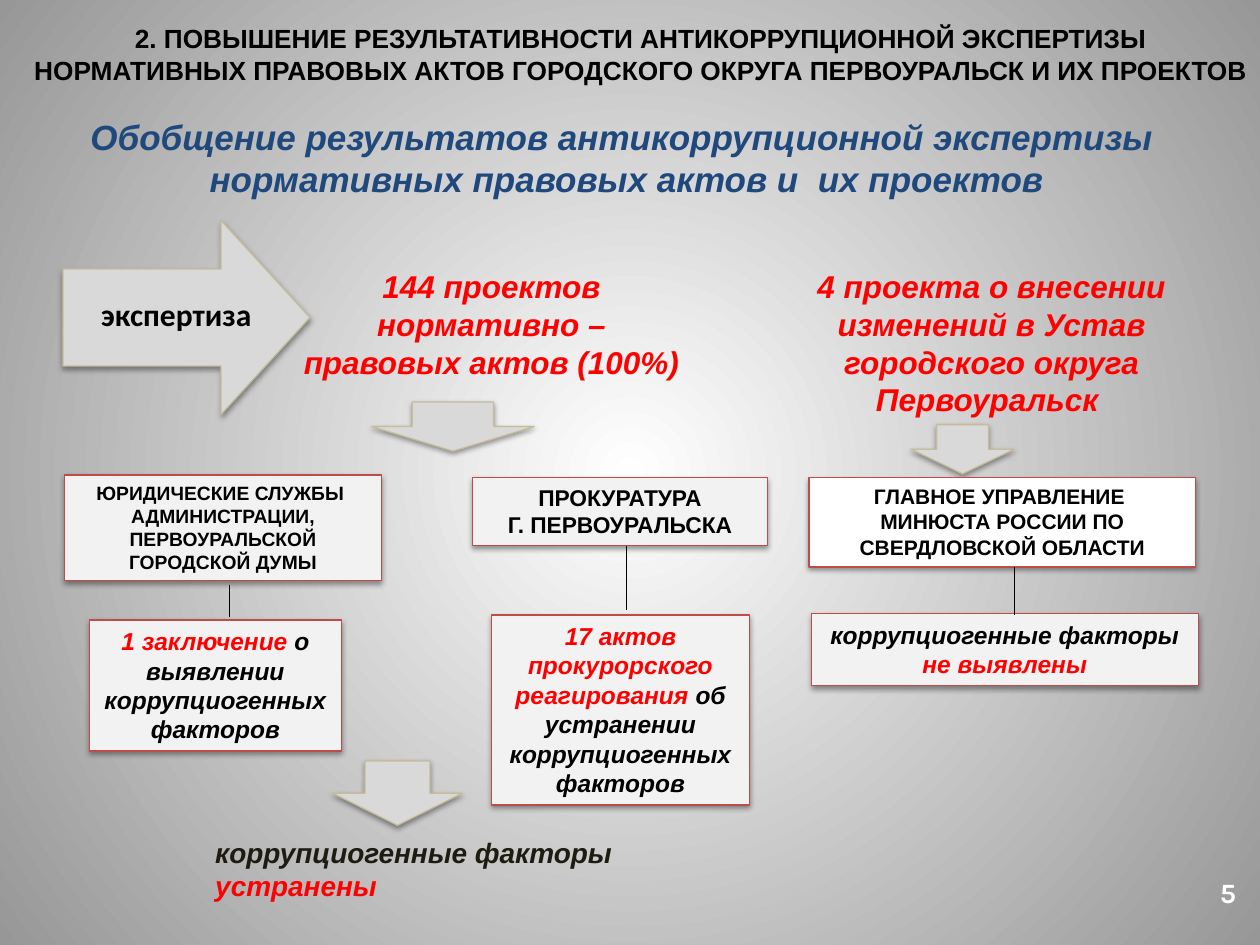
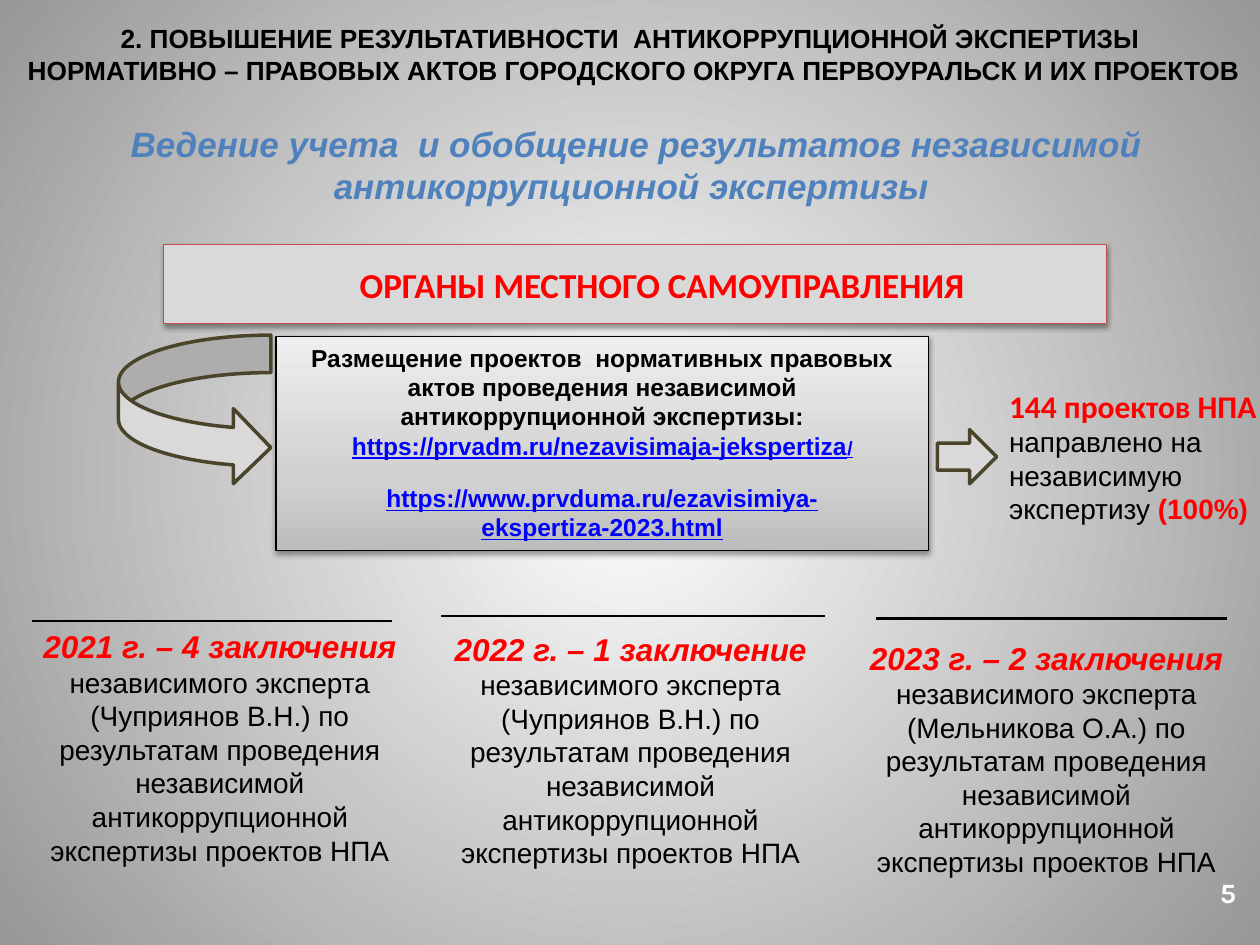
from collections import namedtuple

from lxml import etree
from pptx import Presentation
from pptx.dml.color import RGBColor
from pptx.enum.shapes import MSO_CONNECTOR, MSO_SHAPE
from pptx.enum.text import MSO_ANCHOR, MSO_AUTO_SIZE, PP_ALIGN
from pptx.oxml import parse_xml
from pptx.oxml.ns import nsdecls, qn
from pptx.util import Pt

RECTANGLE, STRAIGHT = MSO_SHAPE.RECTANGLE, MSO_CONNECTOR.STRAIGHT
RIGHT_ARROW, DOWN_ARROW = MSO_SHAPE.RIGHT_ARROW, MSO_SHAPE.DOWN_ARROW
CURVED_ARROW = MSO_SHAPE.CURVED_RIGHT_ARROW
TOP, MIDDLE = MSO_ANCHOR.TOP, MSO_ANCHOR.MIDDLE
LEFT, CENTER = PP_ALIGN.LEFT, PP_ALIGN.CENTER
FIXED = MSO_AUTO_SIZE.NONE

EMU_PER_PX = 9144
BLACK, WHITE, RED, LINK_BLUE = "000000", "FFFFFF", "FF0000", "0000FF"
NAVY, SKY, INK = "1F497D", "4F81BD", "1E1C11"
ARROW_GRAY, BOX_GRAY = "D9D9D9", "F2F2F2"
SAND, OLIVE, BRICK = "C4BD97", "4A452A", "BF4C48"
BACKGROUND_STOPS = [(0, "FFFFFF"), (100, "979797")]
PANEL_STOPS = [(0, "BDBDBD"), (35, "D1D1D1"), (100, "EEEEEE")]
RADIAL = ('<a:path path="circle"><a:fillToRect l="50000" t="50000" '
          'r="50000" b="50000"/></a:path>')
UPWARD = '<a:lin ang="16200000" scaled="0"/>'

Style = namedtuple("Style", "size color bold italic font underline",
                   defaults=(BLACK, True, False, "Arial", False))
HEADING = Style(15)
RESULT = Style(14, italic=True)
RESULT_RED = Style(14, RED, italic=True)
CLAIM = Style(18, RED, italic=True)
PLAIN = Style(16, bold=False)
LINK = Style(14, LINK_BLUE, underline=True)


def px(*lengths):
    """Turn px lengths into EMU."""
    return [length * EMU_PER_PX for length in lengths]


def rgb(color):
    """Turn a hex string into a colour."""
    return RGBColor.from_string(color)


def write(frame, paragraphs, align=CENTER, anchor=TOP):
    """Fill a text frame with paragraphs of (text, style) spans."""
    frame.word_wrap = True
    frame.auto_size = FIXED
    frame.vertical_anchor = anchor
    for index, spans in enumerate(paragraphs):
        para = frame.add_paragraph() if index else frame.paragraphs[0]
        para.alignment = align
        para.space_before = Pt(0)
        for text, style in spans:
            span = para.add_run()
            span.text = text
            font = span.font
            font.name, font.size = style.font, Pt(style.size)
            font.bold, font.italic = style.bold, style.italic
            font.underline = style.underline
            font.color.rgb = rgb(style.color)


def apply_gradient(fill, holder, stops, direction):
    """Give a fill, held in an element, a gradient of (percent, colour) stops."""
    fill.gradient()
    stop_xml = "".join(
        f'<a:gs pos="{percent * 1000}"><a:srgbClr val="{color}"/></a:gs>'
        for percent, color in stops)
    old = next(holder.iter(qn("a:gradFill")))
    old.getparent().replace(old, parse_xml(
        f'<a:gradFill {nsdecls("a")} rotWithShape="1"><a:gsLst>{stop_xml}'
        f'</a:gsLst>{direction}</a:gradFill>'))


def add_shadow(shape):
    """Put a soft shadow under a shape."""
    effects = shape.element.spPr.find(qn("a:effectLst"))
    effects.append(parse_xml(
        f'<a:outerShdw {nsdecls("a")} blurRad="40000" dist="20000" '
        'dir="5400000" rotWithShape="0"><a:srgbClr val="000000">'
        '<a:alpha val="38000"/></a:srgbClr></a:outerShdw>'))


def add_shape(slide, kind, place, fill, line, width=0.75, shadow=True):
    """Add a filled and outlined preset shape."""
    shape = slide.shapes.add_shape(kind, *px(*place))
    shape.shadow.inherit = False
    shape.fill.solid()
    shape.fill.fore_color.rgb = rgb(fill)
    shape.line.color.rgb = rgb(line)
    shape.line.width = Pt(width)
    if shadow:
        add_shadow(shape)
    return shape


def add_box(slide, place, paragraphs, fill=BOX_GRAY, line=BRICK, anchor=TOP):
    """Add a shadowed rectangle with centred text."""
    box = add_shape(slide, RECTANGLE, place, fill, line)
    write(box.text_frame, paragraphs, anchor=anchor)
    return box


def add_text(slide, place, paragraphs, align=CENTER):
    """Add a wrapping text box."""
    box = slide.shapes.add_textbox(*px(*place))
    write(box.text_frame, paragraphs, align)


def add_line(slide, start, end, width=0.75):
    """Add a straight black line without a shadow."""
    line = slide.shapes.add_connector(STRAIGHT, *px(*start, *end))
    line.line.color.rgb = rgb(BLACK)
    line.line.width = Pt(width)
    etree.SubElement(line.element.spPr, qn("a:effectLst"))


def fill_placeholder(holder, place, paragraphs):
    """Move a placeholder and set its text."""
    holder.left, holder.top, holder.width, holder.height = px(*place)
    write(holder.text_frame, paragraphs)


def start_slide(deck, title_place, title, topic_place, topic):
    """Add a slide with its heading, topic and page number."""
    slide = deck.slides.add_slide(deck.slide_layouts[0])
    heading, subtitle = slide.placeholders
    fill_placeholder(heading, title_place, title)
    fill_placeholder(subtitle, topic_place, topic)
    add_text(slide, (949, 690, 51, 37), [[("5", Style(16, WHITE, font="Karla"))]])
    return slide


def build_results_slide(deck):
    """Show who examined the draft acts and what was found."""
    topic = Style(20, NAVY, italic=True)
    slide = start_slide(
        deck, (17, 13, 983, 61),
        [[("2. ПОВЫШЕНИЕ РЕЗУЛЬТАТИВНОСТИ АНТИКОРРУПЦИОННОЙ ЭКСПЕРТИЗЫ "
           "НОРМАТИВНЫХ ПРАВОВЫХ АКТОВ ГОРОДСКОГО ОКРУГА ПЕРВОУРАЛЬСК "
           "И ИХ ПРОЕКТОВ", HEADING)]],
        (41, 87, 913, 77),
        [[("Обобщение результатов антикоррупционной экспертизы ", topic)],
         [("нормативных правовых актов и  их проектов", topic)]])

    arrow = add_shape(slide, RIGHT_ARROW, (50, 175, 196, 154), ARROW_GRAY, SAND)
    arrow.adjustments[1] = 0.458
    add_text(slide, (45, 229, 190, 40),
             [[("экспертиза", Style(18, font="Calibri"))]])
    add_text(slide, (229, 207, 322, 101),
             [[("144 проектов нормативно – правовых актов (100%)", CLAIM)]])
    add_text(slide, (610, 207, 354, 131),
             [[("4 проекта о внесении изменений в Устав городского округа "
                "Первоуральск ", CLAIM)]])
    for place in ((295, 319, 129, 39), (723, 337, 82, 39), (264, 604, 103, 51)):
        add_shape(slide, DOWN_ARROW, place, ARROW_GRAY, SAND)

    add_box(slide, (51, 377, 252, 84),
            [[("ЮРИДИЧЕСКИЕ СЛУЖБЫ  АДМИНИСТРАЦИИ, ПЕРВОУРАЛЬСКОЙ "
               "ГОРОДСКОЙ ДУМЫ", Style(11))]])
    add_box(slide, (375, 379, 234, 54),
            [[("ПРОКУРАТУРА", Style(13))], [("Г. ПЕРВОУРАЛЬСКА", Style(13))]])
    add_box(slide, (642, 379, 307, 71),
            [[("ГЛАВНОЕ УПРАВЛЕНИЕ  МИНЮСТА РОССИИ ПО СВЕРДЛОВСКОЙ ОБЛАСТИ",
               Style(12))]], WHITE)

    add_box(slide, (71, 492, 200, 104),
            [[("1 заключение", RESULT_RED),
              (" о выявлении коррупциогенных факторов", RESULT)]])
    add_box(slide, (390, 488, 205, 151),
            [[("17 актов прокурорского реагирования ", RESULT_RED),
              ("об устранении коррупциогенных факторов", RESULT)]])
    add_box(slide, (644, 487, 307, 57),
            [[("коррупциогенные факторы ", RESULT),
              ("не выявлены", RESULT_RED)]])
    for x, top, bottom in ((182, 464, 490), (497, 433, 484), (805, 450, 488)):
        add_line(slide, (x, top), (x, bottom))

    add_text(slide, (161, 658, 375, 64),
             [[("коррупциогенные факторы ", Style(16, INK, italic=True)),
               ("устранены", Style(16, RED, italic=True))]], LEFT)


def add_year(slide, line, place, claim, expert):
    """Add one year's conclusions under a rule of (left, right, y)."""
    left, right, y = line
    add_line(slide, (left, y), (right, y), 1.5)
    add_text(slide, place,
             [[(claim, CLAIM),
               (f"независимого эксперта ({expert}) по результатам проведения "
                "независимой антикоррупционной экспертизы проектов НПА",
                PLAIN)]])


def build_independent_slide(deck):
    """Show how drafts are published and the yearly conclusions."""
    slide = start_slide(
        deck, (-11, 13, 1028, 61),
        [[("2. ПОВЫШЕНИЕ РЕЗУЛЬТАТИВНОСТИ  АНТИКОРРУПЦИОННОЙ ЭКСПЕРТИЗЫ ",
           HEADING)],
         [("НОРМАТИВНО – ПРАВОВЫХ АКТОВ ГОРОДСКОГО ОКРУГА ПЕРВОУРАЛЬСК "
           "И ИХ ПРОЕКТОВ", HEADING)]],
        (21, 92, 968, 77),
        [[("Ведение учета  и обобщение результатов независимой "
           "антикоррупционной экспертизы ", Style(20, SKY, italic=True))]])

    banner = add_box(slide, (130, 194, 748, 63),
                     [[("ОРГАНЫ МЕСТНОГО САМОУПРАВЛЕНИЯ",
                        Style(20, RED, font="Calibri"))]],
                     ARROW_GRAY, "C0504D", MIDDLE)
    banner.text_frame.margin_left = px(53)[0]

    panel = add_box(slide, (219, 267, 518, 170),
                    [[("Размещение проектов  нормативных правовых актов "
                       "проведения независимой антикоррупционной экспертизы:",
                       Style(14))],
                     [("https://prvadm.ru/nezavisimaja-jekspertiza", LINK),
                      ("/", LINK._replace(size=11))],
                     [("https://www.prvduma.ru/ezavisimiya-ekspertiza-2023.html",
                       LINK)]], line=BLACK)
    apply_gradient(panel.fill, panel.element, PANEL_STOPS, UPWARD)
    panel.text_frame.paragraphs[-1].space_before = Pt(13)

    for kind, place in ((CURVED_ARROW, (94, 266, 121, 119)),
                        (RIGHT_ARROW, (744, 341, 47, 43))):
        add_shape(slide, kind, place, ARROW_GRAY, OLIVE, 2, False)
    add_text(slide, (791, 302, 222, 121),
             [[("144 проектов НПА ", Style(18, RED, font="Calibri")),
               ("направлено на независимую экспертизу ", PLAIN),
               ("(100%)", Style(16, RED))]], LEFT)

    add_year(slide, (25, 311, 493), (15, 493, 319, 202),
             "2021 г. – 4 заключения ", "Чуприянов В.Н.")
    add_year(slide, (350, 655, 489), (349, 495, 303, 202),
             "2022 г. – 1 заключение ", "Чуприянов В.Н.")
    add_year(slide, (695, 974, 491), (673, 502, 315, 202),
             "2023 г. – 2 заключения ", "Мельникова О.А.")


def main():
    """Build and save the deck."""
    deck = Presentation()
    deck.slide_width, deck.slide_height = px(1000, 750)
    master = deck.slide_master
    apply_gradient(master.background.fill, master.element,
                   BACKGROUND_STOPS, RADIAL)
    build_results_slide(deck)
    build_independent_slide(deck)
    deck.save("out.pptx")


if __name__ == "__main__":
    main()
